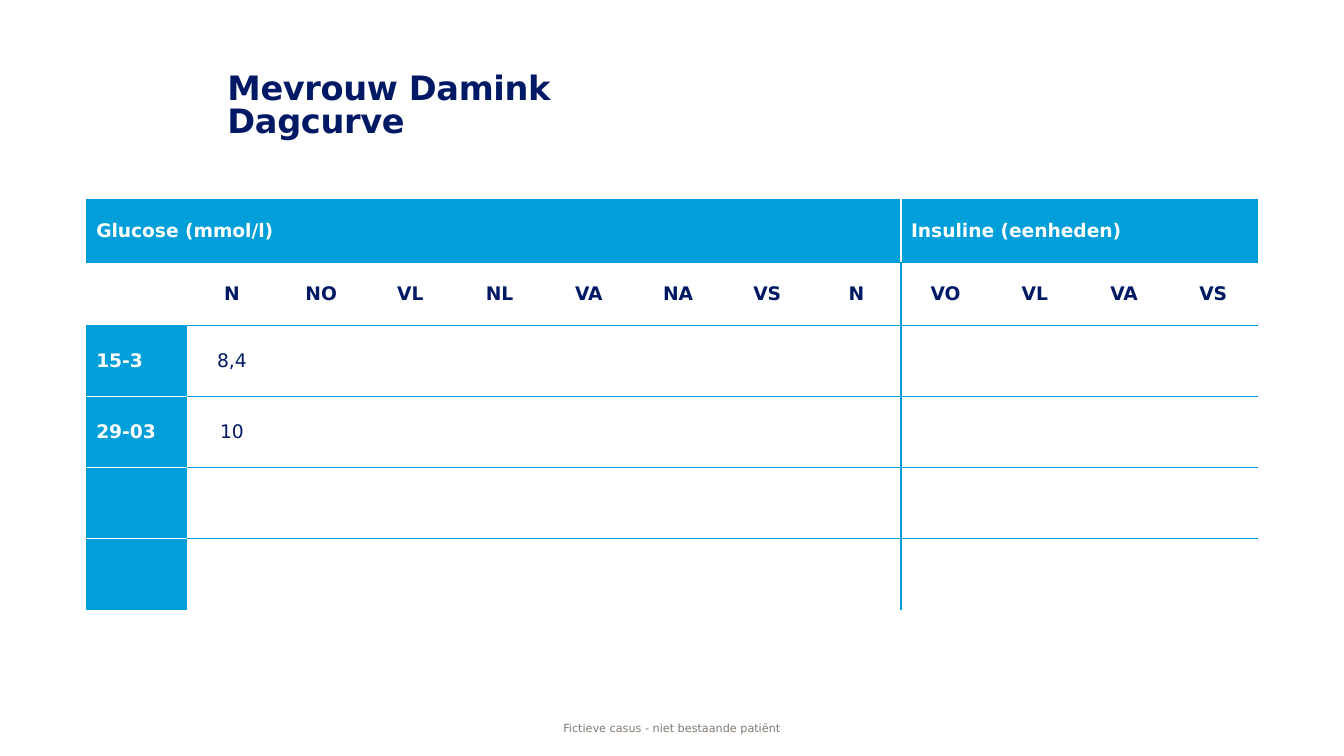
from lxml.etree import SubElement
from pptx import Presentation
from pptx.dml.color import RGBColor
from pptx.enum.text import MSO_ANCHOR, PP_ALIGN
from pptx.oxml.ns import qn
from pptx.util import Cm, Pt

NAVY = RGBColor(0x00, 0x19, 0x65)
BLUE = RGBColor(0x00, 0x9F, 0xDA)
WHITE = RGBColor(0xFF, 0xFF, 0xFF)
GREY = RGBColor(0x82, 0x78, 0x6F)
FONT = "DejaVu Sans"

GLUCOSE_MOMENTS = ["N", "NO", "VL", "NL", "VA", "NA", "VS", "N"]
INSULIN_MOMENTS = ["VO", "VL", "VA", "VS"]
MEASUREMENTS = [("15-3", "8,4"), ("29-03", "10"), (), ()]
INSULIN_COLUMN = 1 + len(GLUCOSE_MOMENTS)
COLUMN_COUNT = INSULIN_COLUMN + len(INSULIN_MOMENTS)


def write_text(paragraph, text, color, size, bold=False, align=PP_ALIGN.LEFT):
    paragraph.text = text
    paragraph.alignment = align
    font_format = {"name": FONT, "size": Pt(size), "bold": bold}
    for run in paragraph.runs:
        for attribute, value in font_format.items():
            setattr(run.font, attribute, value)
        run.font.color.rgb = color


def add_text_box(slide, box, anchor):
    frame = slide.shapes.add_textbox(*map(Cm, box)).text_frame
    frame_format = {"word_wrap": True, "vertical_anchor": anchor,
                    "margin_left": 0, "margin_right": 0,
                    "margin_top": 0, "margin_bottom": 0}
    for attribute, value in frame_format.items():
        setattr(frame, attribute, value)
    return frame.paragraphs[0]


def add_title(slide, box):
    paragraph = add_text_box(slide, box, MSO_ANCHOR.TOP)
    write_text(paragraph, "Mevrouw Damink\vDagcurve", NAVY, 18, bold=True)
    paragraph.line_spacing = 0.8
    for run in paragraph.runs:
        run.font._element.set("spc", "-20")


def add_footer(slide, box):
    paragraph = add_text_box(slide, box, MSO_ANCHOR.MIDDLE)
    write_text(paragraph, "Fictieve casus - niet bestaande patiënt", GREY, 6,
               align=PP_ALIGN.CENTER)


def set_borders(cell, colors):
    """Draw the edges L, R, T and B; an edge without a colour stays empty."""
    properties = cell._tc.get_or_add_tcPr()
    for edge, color in zip("LRTB", colors):
        line = SubElement(properties, qn(f"a:ln{edge}"), w=str(Pt(0.75)))
        if color is None:
            SubElement(line, qn("a:noFill"))
        else:
            fill = SubElement(line, qn("a:solidFill"))
            SubElement(fill, qn("a:srgbClr"), val=str(color))


def row_line(row, column, row_count):
    """Colour of the line above a row."""
    if row in (0, row_count):
        return None
    return WHITE if column == 0 and row > 2 else BLUE


def column_line(row, column):
    """Colour of the line to the left of a column."""
    if column != INSULIN_COLUMN:
        return None
    return WHITE if row == 0 else BLUE


def format_cell(cell, row, column, row_count):
    last_column = column
    if cell.is_merge_origin:
        last_column += cell.span_width - 1
    set_borders(cell, [column_line(row, column),
                       column_line(row, last_column + 1),
                       row_line(row, column, row_count),
                       row_line(row + 1, column, row_count)])
    cell_format = {"vertical_anchor": MSO_ANCHOR.MIDDLE,
                   "margin_left": Cm(0.19), "margin_right": Cm(0.19),
                   "margin_top": Cm(0.08), "margin_bottom": Cm(0.08)}
    for attribute, value in cell_format.items():
        setattr(cell, attribute, value)
    is_heading = row == 0 or (column == 0 and row > 1)
    cell.fill.solid()
    cell.fill.fore_color.rgb = BLUE if is_heading else WHITE
    return is_heading


def add_day_curve(slide, box):
    header = [""] * COLUMN_COUNT
    header[0] = "Glucose (mmol/l)"
    header[INSULIN_COLUMN] = "Insuline (eenheden)"
    rows = [header, ["", *GLUCOSE_MOMENTS, *INSULIN_MOMENTS], *MEASUREMENTS]

    row_count = len(rows)
    table = slide.shapes.add_table(row_count, COLUMN_COUNT, *map(Cm, box)).table
    table.first_row = table.horz_banding = False

    # Column widths and row heights
    date_width, heading_height = 1.91, 1.2
    moment_width = (box[2] - date_width) / (COLUMN_COUNT - 1)
    day_height = (box[3] - 2 * heading_height) / len(MEASUREMENTS)
    for index, column in enumerate(table.columns):
        column.width = Cm(moment_width if index else date_width)
    for index, row in enumerate(table.rows):
        row.height = Cm(day_height if index > 1 else heading_height)

    # Group headings
    table.cell(0, 0).merge(table.cell(0, INSULIN_COLUMN - 1))
    table.cell(0, INSULIN_COLUMN).merge(table.cell(0, COLUMN_COUNT - 1))

    # Cells
    for row, texts in enumerate(rows):
        for column in range(COLUMN_COUNT):
            cell = table.cell(row, column)
            is_heading = format_cell(cell, row, column, row_count)
            if column < len(texts) and texts[column]:
                write_text(cell.text_frame.paragraphs[0], texts[column],
                           WHITE if is_heading else NAVY, 10,
                           bold=is_heading or row == 1,
                           align=PP_ALIGN.LEFT if is_heading else PP_ALIGN.CENTER)


def main():
    presentation = Presentation()
    presentation.slide_width = Cm(25.4)
    presentation.slide_height = Cm(14.29)
    slide = presentation.slides.add_slide(presentation.slide_layouts[6])

    add_day_curve(slide, (1.63, 3.76, 22.15, 7.77))
    add_title(slide, (4.3, 1.42, 19.48, 1.8))
    add_footer(slide, (8.67, 13.42, 8.05, 0.7))

    presentation.save("out.pptx")


if __name__ == "__main__":
    main()
